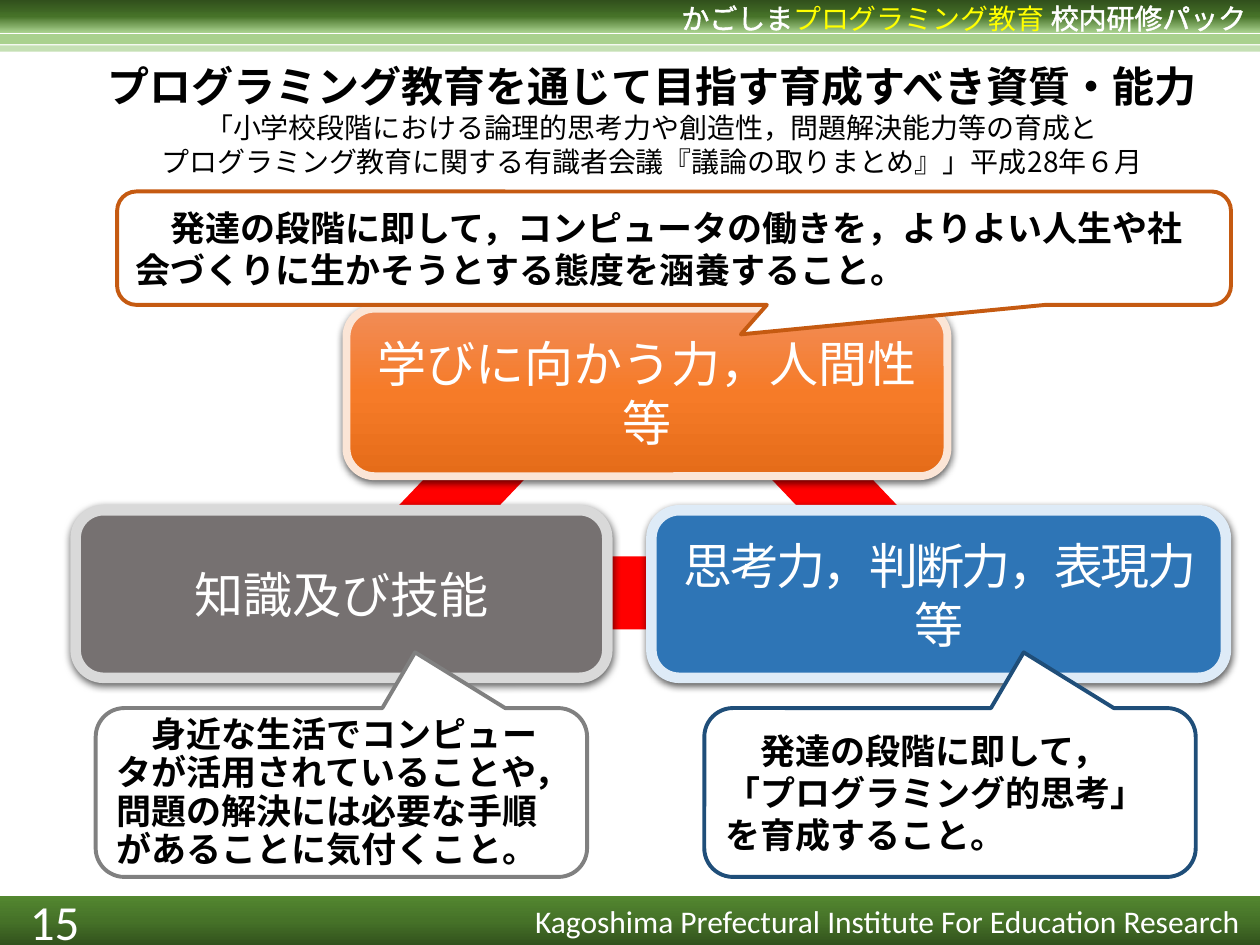
from dataclasses import dataclass

from lxml import etree
from pptx import Presentation
from pptx import util as u
from pptx.dml.color import RGBColor
from pptx.enum import shapes, text
from pptx.oxml import parse_xml
from pptx.oxml.ns import nsdecls, qn

COLS, ROWS = 100, 75
CELL = u.Inches(0.1)
GOTHIC, LATIN = "Noto Sans CJK JP", "Calibri"
SHAPE = shapes.MSO_SHAPE
ALIGN = text.PP_ALIGN


@dataclass(frozen=True)
class Theme:
    white: str = "FFFFFF"
    black: str = "000000"
    yellow: str = "FFFF00"
    red: str = "FF0000"
    bands: tuple = ("A9D18E", "C5E0B4")
    header: tuple = ("31501C", "467228", "A9D18E")
    footer: tuple = ("31501C", "467228", "538730")
    attitude: tuple = ("F18C57", "F67B28", "E56C19")
    attitude_edge: str = "FBE5D6"
    attitude_note: str = "C55A11"
    knowledge: str = "767171"
    knowledge_edge: str = "D9D9D9"
    knowledge_note: str = "808080"
    thinking: str = "2E75B6"
    thinking_edge: str = "DEEBF7"
    thinking_note: str = "1F4E79"
    small: int = 16
    caption: int = 18
    body: int = 20
    title: int = 24
    label: int = 28


T = Theme()


@dataclass(frozen=True)
class Box:
    x: float
    y: float
    w: float
    h: float

    def cell(self, x, y, w, h):
        return Box(self.x + x, self.y + y, w, h)

    def emu(self):
        return [round(v * CELL) for v in (self.x, self.y, self.w, self.h)]


def apply(target, values):
    for name, value in values.items():
        setattr(target, name, value)


def paint(sp, fill, angle):
    if isinstance(fill, str):
        sp.fill.solid()
        sp.fill.fore_color.rgb = RGBColor.from_string(fill)
        return
    stops = "".join(f'<a:gs pos="{i * 50000}"><a:srgbClr val="{c}"/></a:gs>'
                    for i, c in enumerate(fill))
    grad = parse_xml(f'<a:gradFill {nsdecls("a")} rotWithShape="1"><a:gsLst>{stops}</a:gsLst>'
                     f'<a:lin ang="{angle * 60000}" scaled="0"/></a:gradFill>')
    sp._element.spPr.find(qn("a:prstGeom")).addnext(grad)


def add_block(s, box, fill, kind=SHAPE.RECTANGLE, line=None, angle=90, rotation=0):
    sp = s.shapes.add_shape(kind, *box.emu())
    apply(sp, {"rotation": rotation})
    sp.shadow.inherit = False
    paint(sp, fill, angle)
    if line:
        sp.line.color.rgb = RGBColor.from_string(line[0])
        sp.line.width = u.Pt(line[1])
    else:
        sp.line.fill.background()
    return sp


def cast_shadow(sp):
    effects = sp._element.spPr.find(qn("a:effectLst"))
    effects.append(parse_xml(
        f'<a:outerShdw {nsdecls("a")} blurRad="57150" dist="19050" dir="5400000" '
        'algn="ctr" rotWithShape="0"><a:srgbClr val="000000"><a:alpha val="63000"/>'
        '</a:srgbClr></a:outerShdw>'))


def add_run(p, words, size, color, font=GOTHIC, bold=False, outline=None, spacing=None):
    r = p.add_run()
    r.text = words
    apply(r.font, {"size": u.Pt(size), "bold": bold, "name": font})
    r.font.color.rgb = RGBColor.from_string(color)
    rpr = r._r.get_or_add_rPr()
    rpr.set("lang", "ja-JP")
    ea = etree.Element(qn("a:ea"))
    ea.set("typeface", GOTHIC)
    rpr.find(qn("a:latin")).addnext(ea)
    if outline:
        rpr.insert(0, parse_xml(f'<a:ln {nsdecls("a")} w="{u.Pt(outline)}"><a:solidFill>'
                                f'<a:srgbClr val="{color}"/></a:solidFill></a:ln>'))
    if spacing:
        rpr.set("spc", str(round(spacing * 100)))


def write(sp, lines, align=ALIGN.CENTER, anchor=text.MSO_ANCHOR.MIDDLE, wrap=True):
    tf = sp.text_frame
    apply(tf, {"word_wrap": wrap, "vertical_anchor": anchor})
    for i, runs in enumerate(lines):
        p = tf.add_paragraph() if i else tf.paragraphs[0]
        p.alignment = align
        for words, style in runs:
            add_run(p, words, **style)
    return tf


def header(s, box):
    add_block(s, box.cell(0, 0, box.w, 2.6), T.header)
    for y, h, color in zip((2.7, 3.6), (0.8, 0.5), T.bands):
        add_block(s, box.cell(0, y, box.w, h), color)
    style = {"size": T.small, "font": LATIN, "outline": 0.8}
    tx = s.shapes.add_textbox(*box.cell(52.8, -0.4, 47.4, 3.7).emu())
    write(tx, [[("かごしま", style | {"color": T.white}),
                ("プログラミング教育 ", style | {"color": T.yellow}),
                ("校内研修パック", style | {"color": T.white})]],
          anchor=text.MSO_ANCHOR.TOP, wrap=False)


def heading(s, box):
    title = {"size": T.title, "color": T.black, "bold": True}
    source = {"size": T.small, "color": T.black}
    write(s.shapes.add_textbox(*box.emu()), [
        [("プログラミング教育を通じて目指す育成すべき資質・能力", title)],
        [("「小学校段階における論理的思考力や創造性，問題解決能力等の育成と", source)],
        [("プログラミング教育に関する有識者会議『議論の取りまとめ』」平成28年６月", source)],
    ], anchor=text.MSO_ANCHOR.TOP)


def triangle(s, box):
    for x, y, length, rotation in ((36.7, 4.6, 40.1, 90), (29.2, 0, 30.3, 43.6),
                                   (55.4, -0.5, 30.3, 316.4)):
        add_block(s, box.cell(x, y, 5.8, length), T.red, rotation=rotation)


def card(s, box, words, fill, line, spacing=None):
    sp = add_block(s, box, fill, SHAPE.ROUNDED_RECTANGLE, line)
    cast_shadow(sp)
    write(sp, [[(words, {"size": T.label, "color": T.white, "spacing": spacing})]])


def callout(s, box, words, line, tip, leading=None):
    sp = add_block(s, box, T.white, SHAPE.ROUNDED_RECTANGULAR_CALLOUT, (line, 2.25))
    for i, value in enumerate((*tip, 0.17)):
        sp.adjustments[i] = value
    style = {"size": T.body, "color": T.black, "bold": True}
    p = write(sp, [[(words, style)]], ALIGN.LEFT).paragraphs[0]
    p._p.get_or_add_pPr().set("indent", str(u.Pt(T.body)))
    if leading:
        p.line_spacing = u.Pt(leading)


def abilities(s, box):
    triangle(s, box.cell(0, 7.2, box.w, 38.6))
    card(s, box.cell(21.5, 9.3, 47.7, 13.3), "学びに向かう力，人間性等",
         T.attitude, (T.attitude_edge, 4.5))
    card(s, box.cell(0, 25.3, 42.2, 13.3), "知識及び技能",
         T.knowledge, (T.knowledge_edge, 6))
    card(s, box.cell(45.7, 25.3, 45.6, 13.3), "思考力，判断力，表現力等",
         T.thinking, (T.thinking_edge, 6), -1.5)
    callout(s, box.cell(3.3, 0, 88.4, 9),
            "発達の段階に即して，コンピュータの働きを，よりよい人生や社会づくりに"
            "生かそうとする態度を涵養すること。", T.attitude_note, (0.06, 0.76))
    tip = (0.15, -0.83)
    callout(s, box.cell(1.6, 41, 39, 13.4),
            "身近な生活でコンピュータが活用されていることや，問題の解決には必要な手順が"
            "あることに気付くこと。", T.knowledge_note, tip, 22)
    callout(s, box.cell(49.9, 41, 39, 13.4),
            "発達の段階に即して，「プログラミング的思考」を育成すること。",
            T.thinking_note, tip)


def footer(s, box):
    sp = add_block(s, box, T.footer, angle=270)
    style = {"color": T.white, "font": LATIN}
    tf = write(sp, [[("Kagoshima Prefectural Institute For Education Research",
                      style | {"size": T.caption})]], ALIGN.RIGHT)
    tf.margin_right = round(1.6 * CELL)
    number = s.shapes.add_textbox(*box.cell(0, 0, 8.7, box.h).emu())
    write(number, [[("15", style | {"size": T.label})]])


def main():
    prs = Presentation()
    apply(prs, {"slide_width": COLS * CELL, "slide_height": ROWS * CELL})
    s = prs.slides.add_slide(prs.slide_layouts[6])
    header(s, Box(0, 0, COLS, 4.1))
    heading(s, Box(3.4, 4.3, 96.7, 10.4))
    abilities(s, Box(6, 15.2, 91.7, 54.4))
    footer(s, Box(0, 71.1, COLS, 4))
    prs.save("out.pptx")


if __name__ == "__main__":
    main()
